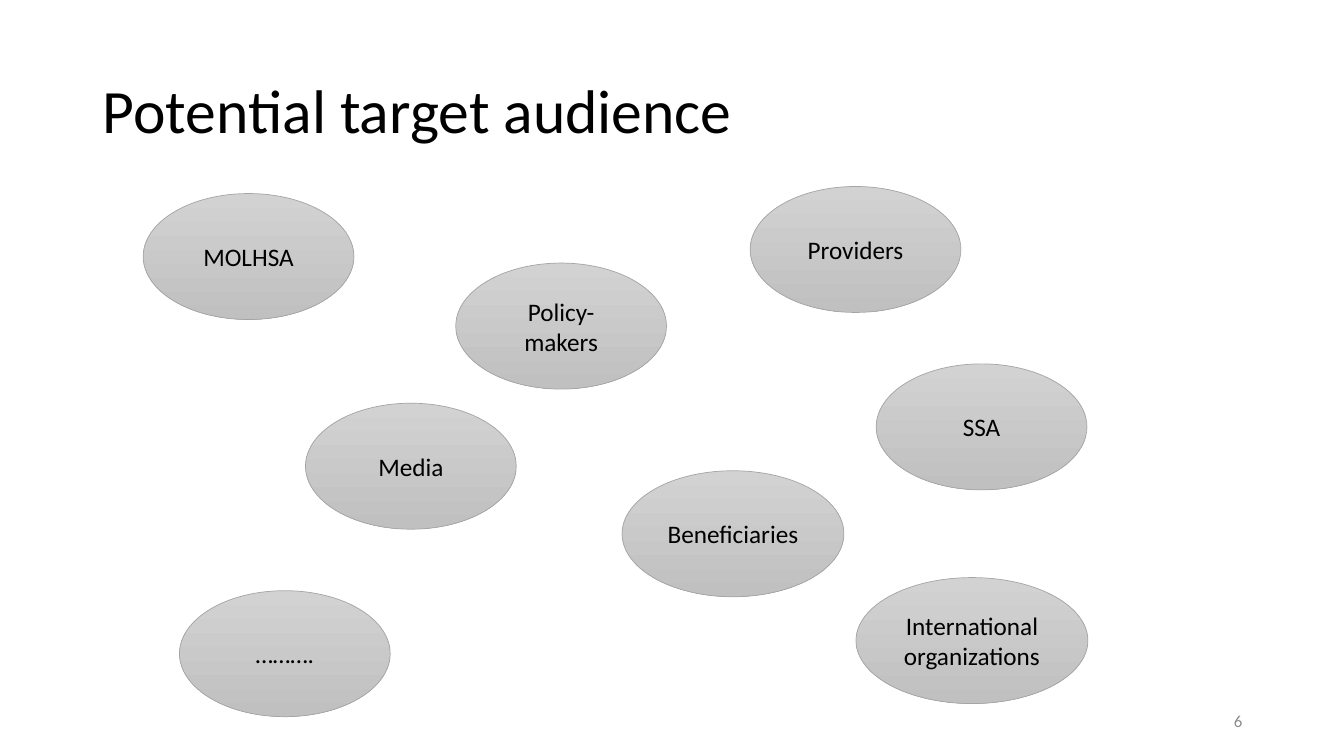
from pptx import Presentation
from pptx.dml.color import RGBColor
from pptx.enum.shapes import MSO_SHAPE as Shape
from pptx.enum.text import MSO_ANCHOR as Anchor, PP_ALIGN as Align
from pptx.util import Inches, Pt

WIDE, HIGH = 13.33, 7.5
OVAL_W, OVAL_H = 2.09, 1.25

# Label, left, top, width of each audience oval
GROUPS = [
    ("Media", 3.03, 4, OVAL_W),
    ("SSA", 8.69, 3.61, OVAL_W),
    ("Providers", 7.44, 1.85, OVAL_W),
    ("Policy- makers", 4.52, 2.61, OVAL_W),
    ("MOLHSA", 1.42, 1.92, OVAL_W),
    ("Beneficiaries", 6.17, 4.67, 2.2),
    ("International organizations", 8.49, 5.73, 2.3),
    ("……….", 1.78, 5.86, OVAL_W),
]


def paint(code):
    return RGBColor.from_string(code)


def write(shape, text, size=18, color="000000", align=Align.CENTER, lead=1.0):
    frame = shape.text_frame
    frame.word_wrap = True
    frame.vertical_anchor = Anchor.MIDDLE
    para = frame.paragraphs[0]
    para.alignment = align
    para.line_spacing = lead
    run = para.add_run()
    run.text = text
    run.font.name = "Calibri"
    run.font.size = Pt(size)
    run.font.color.rgb = paint(color)


def label(slide, text, box, **style):
    write(slide.shapes.add_textbox(*map(Inches, box)), text, **style)


def oval(slide, text, left, top, width):
    box = map(Inches, (left, top, width, OVAL_H))
    shape = slide.shapes.add_shape(Shape.OVAL, *box)
    shape.shadow.inherit = False
    # Grey shading that darkens from top to bottom
    shape.fill.gradient()
    shape.fill.gradient_angle = 270
    for stop, code, place in zip(shape.fill.gradient_stops, ("D2D2D2", "C0C0C0"), (0, 1)):
        stop.color.rgb = paint(code)
        stop.position = place
    shape.line.color.rgb = paint("A5A5A5")
    shape.line.width = Pt(0.5)
    write(shape, text)


def main():
    deck = Presentation()
    deck.slide_width, deck.slide_height = Inches(WIDE), Inches(HIGH)
    slide = deck.slides.add_slide(deck.slide_layouts[6])

    # Title
    label(slide, "Potential target audience", (0.92, 0.4, 11.5, 1.45),
          size=44, align=Align.LEFT, lead=0.9)

    # Audience ovals
    for group in GROUPS:
        oval(slide, *group)

    # Slide number
    label(slide, "6", (9.42, 6.95, 3, 0.4), size=12, color="8C8C8C", align=Align.RIGHT)

    deck.save("out.pptx")


if __name__ == "__main__":
    main()
